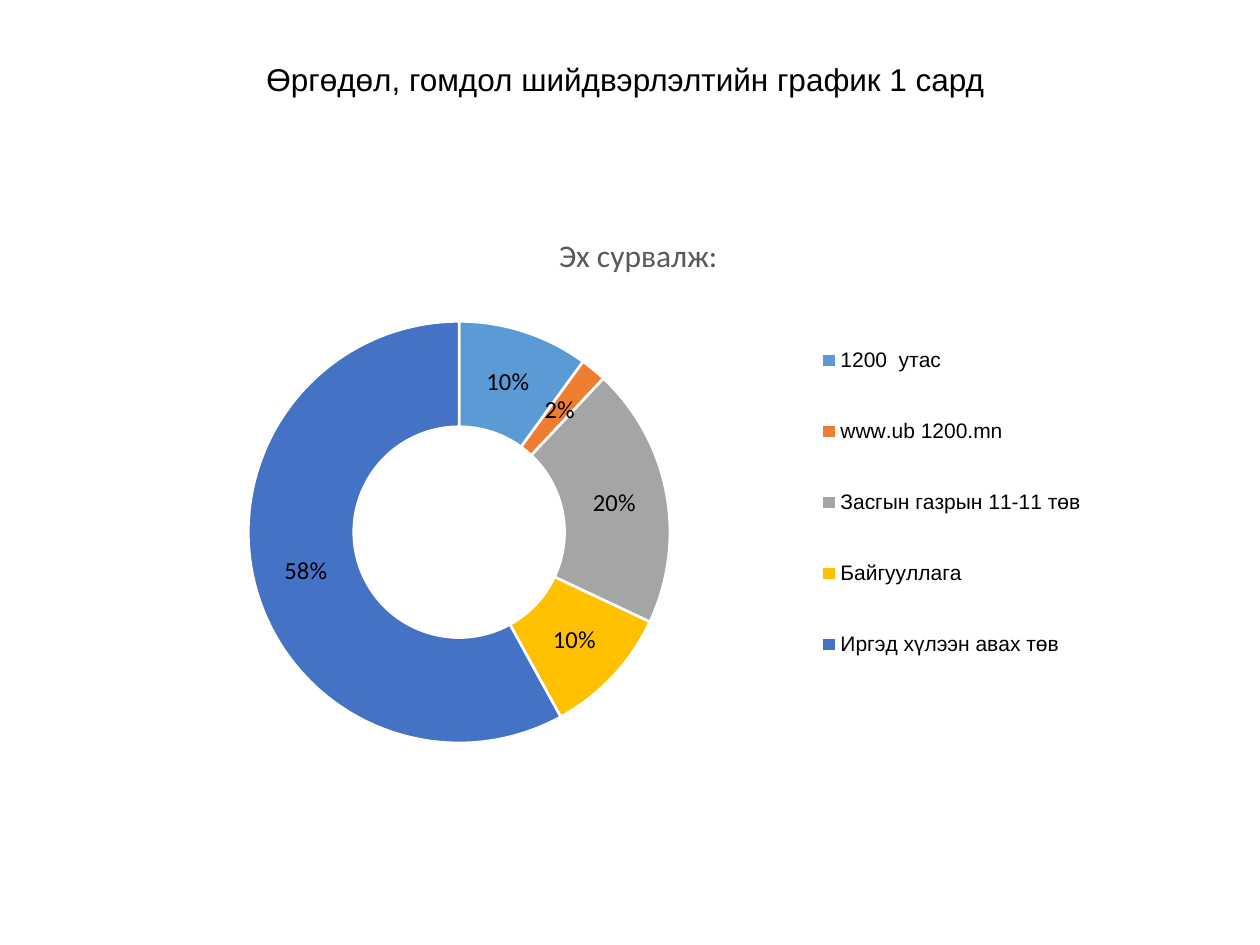
from lxml import etree
from pptx import Presentation
from pptx.chart.data import CategoryChartData
from pptx.dml.color import RGBColor
from pptx.enum import chart as ch, text
from pptx.oxml import ns
from pptx.util import Cm, Pt

COLORS = {"text": "000000", "heading": "595959", "gap": "FFFFFF"}
SOURCES = [
    ("1200  утас", 10, "5B9BD5"),
    ("www.ub 1200.mn", 2, "ED7D31"),
    ("Засгын газрын 11-11 төв", 20, "A5A5A5"),
    ("Байгууллага", 10, "FFC000"),
    ("Иргэд хүлээн авах төв", 58, "4472C4"),
]


def set_font(font, name, size, color="text"):
    font.name, font.size, font.bold = name, Pt(size), False
    font.color.rgb = RGBColor.from_string(COLORS[color])


def set_layout(element, index, inner=False, **fractions):
    """Place a chart part by fractions (x, y, w, h) of the chart area."""
    for old in element.findall(ns.qn("c:layout")):
        element.remove(old)
    layout = etree.Element(ns.qn("c:layout"))
    manual = etree.SubElement(layout, ns.qn("c:manualLayout"))
    settings = [("layoutTarget", "inner")] if inner else []
    settings += [("xMode", "edge"), ("yMode", "edge"), *fractions.items()]
    for tag, value in settings:
        etree.SubElement(manual, ns.qn(f"c:{tag}")).set("val", str(value))
    element.insert(index, layout)


def add_title(s, x, y, w, h):
    title = s.shapes.title
    title.left, title.top, title.width, title.height = x, y, w, h
    tf = title.text_frame
    tf.text = "Өргөдөл, гомдол шийдвэрлэлтийн график 1 сард "
    tf.word_wrap = True
    tf.vertical_anchor = text.MSO_ANCHOR.MIDDLE
    p = tf.paragraphs[0]
    p.alignment = text.PP_ALIGN.CENTER
    p.line_spacing = 0.9
    set_font(p.font, "Arial", 18)


def add_source_chart(s, x, y, w, h):
    data = CategoryChartData()
    data.categories = [name for name, _, _ in SOURCES]
    data.add_series("Series 1", [value for _, value, _ in SOURCES])
    chart = s.shapes.add_chart(ch.XL_CHART_TYPE.DOUGHNUT, x, y, w, h, data).chart
    set_font(chart.font, "Calibri", 10)

    chart.has_title = True
    tf = chart.chart_title.text_frame
    tf.text = "Эх сурвалж:"
    set_font(tf.paragraphs[0].font, "Calibri", 18, "heading")
    set_layout(chart.chart_title._element, 1, x=0.43, y=0.04)

    chart.has_legend = True
    legend = chart.legend
    legend.position = ch.XL_LEGEND_POSITION.RIGHT
    legend.include_in_layout = False
    set_font(legend.font, "Arial", 12)
    set_layout(legend._element, 1, x=0.65, y=0.15, w=0.25, h=0.61)

    plot = chart.plots[0]
    plot.vary_by_categories = True
    set_layout(chart._chartSpace.chart.plotArea, 0, inner=True,
               x=0.166, y=0.169, w=0.365, h=0.662)
    plot.has_data_labels = True
    labels = plot.data_labels
    labels.show_percentage, labels.show_value = True, False
    labels.number_format, labels.number_format_is_linked = "0%", False
    set_font(labels.font, "Calibri", 14)

    for i, (_, _, color) in enumerate(SOURCES):
        fmt = plot.series[0].points[i].format
        fmt.fill.solid()
        fmt.fill.fore_color.rgb = RGBColor.from_string(color)
        fmt.line.color.rgb = RGBColor.from_string(COLORS["gap"])
        fmt.line.width = Pt(1.5)


def main():
    prs = Presentation()
    prs.slide_width, prs.slide_height = Cm(25.4), Cm(19.05)
    s = prs.slides.add_slide(prs.slide_layouts[5])
    add_title(s, Cm(1.75), Cm(1.02), Cm(21.9), Cm(1.22))
    add_source_chart(s, Cm(1.14), Cm(4.06), Cm(23.29), Cm(13.34))
    prs.save("out.pptx")


if __name__ == "__main__":
    main()
